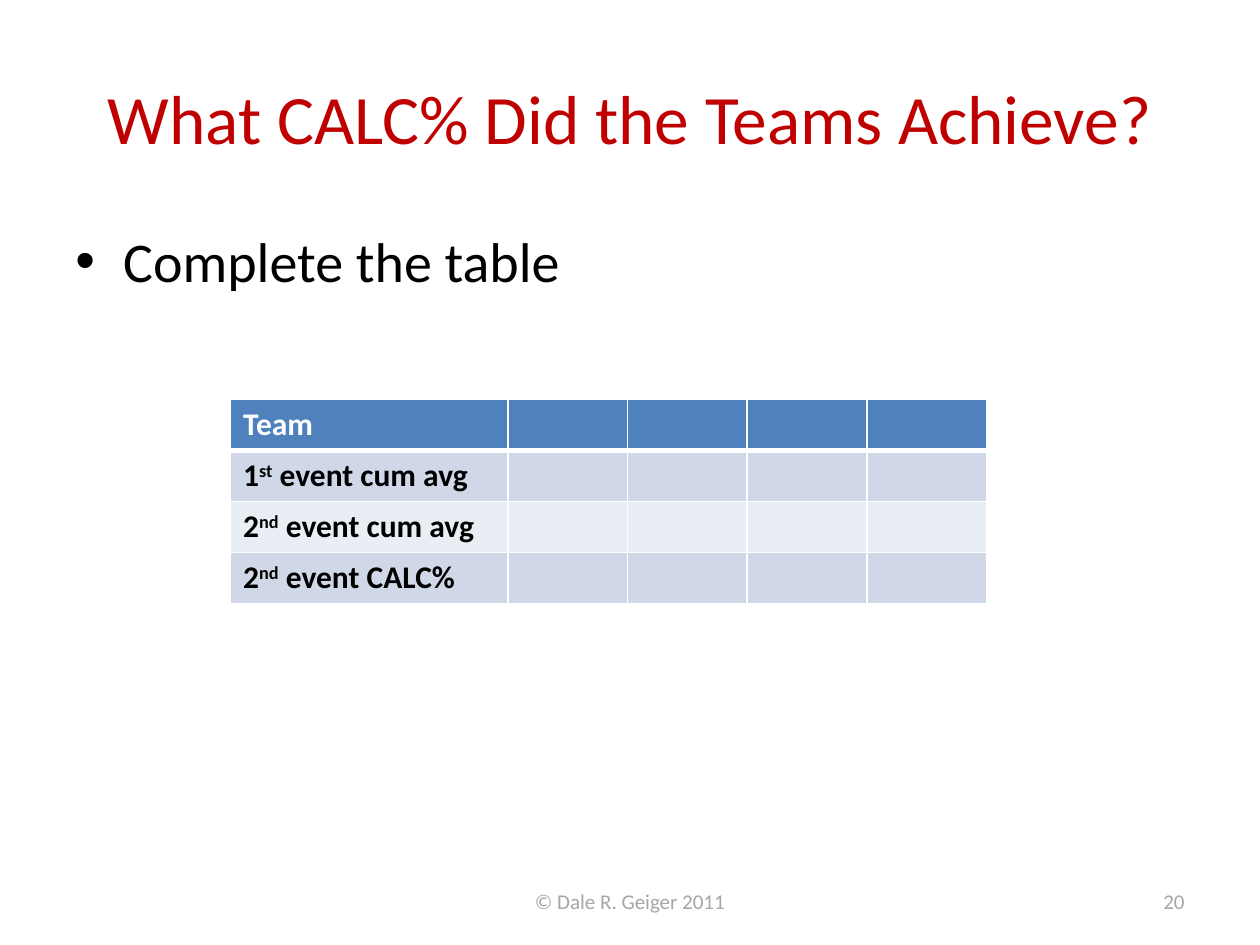
from lxml import etree
from pptx import Presentation
from pptx.dml.color import RGBColor
from pptx.enum.text import MSO_ANCHOR, PP_ALIGN
from pptx.oxml.ns import qn
from pptx.util import Inches, Pt

LEFT, CENTER, RIGHT = PP_ALIGN.LEFT, PP_ALIGN.CENTER, PP_ALIGN.RIGHT
TOP, MIDDLE = MSO_ANCHOR.TOP, MSO_ANCHOR.MIDDLE

RED = RGBColor(0xC0, 0x00, 0x00)
BLACK = RGBColor(0x00, 0x00, 0x00)
WHITE = RGBColor(0xFF, 0xFF, 0xFF)
GRAY = RGBColor(0xA6, 0xA6, 0xA6)
HEADER_BLUE = RGBColor(0x4F, 0x81, 0xBD)
BAND_DARK = RGBColor(0xD0, 0xD8, 0xE8)
BAND_LIGHT = RGBColor(0xE9, 0xED, 0xF4)

FONT = "Calibri"
SUPERSCRIPT = "30000"

# Each row label is a list of (text, is superscript) pieces
ROW_LABELS = [
    [("Team", False)],
    [("1", False), ("st", True), (" event cum avg", False)],
    [("2", False), ("nd", True), (" event cum avg", False)],
    [("2", False), ("nd", True), (" event CALC%", False)],
]
LABEL_WIDTH, TEAM_WIDTH, TEAM_COUNT = 2.2, 0.95, 4


def add_span(para, text, size=18, color=BLACK, bold=False, raised=False):
    """Append one formatted run to a paragraph."""
    span = para.add_run()
    span.text = text
    font = span.font
    font.name, font.size, font.bold = FONT, Pt(size), bold
    font.color.rgb = color
    if raised:
        font._element.set("baseline", SUPERSCRIPT)


def add_text(page, box, text, align=LEFT, anchor=MIDDLE, **style):
    """Place a wrapped text box and return its paragraph."""
    frame = page.shapes.add_textbox(*map(Inches, box)).text_frame
    frame.word_wrap = True
    frame.vertical_anchor = anchor
    para = frame.paragraphs[0]
    para.alignment = align
    add_span(para, text, **style)
    return para


def add_bullet(page, box, text, indent=0.38, **style):
    """Place a bulleted line with a hanging indent."""
    props = add_text(page, box, text, anchor=TOP, **style)._p.get_or_add_pPr()
    props.set("marL", str(Inches(indent)))
    props.set("indent", str(-Inches(indent)))
    before = etree.SubElement(props, qn("a:spcBef"))
    etree.SubElement(before, qn("a:spcPct"), val="20000")
    etree.SubElement(props, qn("a:buFont"), typeface="Arial")
    etree.SubElement(props, qn("a:buChar"), char="•")


def set_borders(cell, widths):
    """Draw white cell borders; widths maps a side tag to points."""
    props = cell._tc.get_or_add_tcPr()
    for position, (side, width) in enumerate(widths.items()):
        line = etree.Element(qn(f"a:{side}"), w=str(Pt(width)))
        fill = etree.SubElement(line, qn("a:solidFill"))
        etree.SubElement(fill, qn("a:srgbClr"), val=str(WHITE))
        props.insert(position, line)


def add_team_table(page, box):
    """Place the table with a label column and empty team columns."""
    frame = page.shapes.add_table(len(ROW_LABELS), 1 + TEAM_COUNT, *map(Inches, box))
    table = frame.table
    for index, column in enumerate(table.columns):
        column.width = Inches(TEAM_WIDTH if index else LABEL_WIDTH)

    for row, label in enumerate(ROW_LABELS):
        is_header = row == 0
        band = BAND_DARK if row % 2 else BAND_LIGHT
        for cell in table.rows[row].cells:
            cell.fill.solid()
            cell.fill.fore_color.rgb = HEADER_BLUE if is_header else band
            set_borders(cell, {"lnL": 1, "lnR": 1,
                               "lnT": 3 if row == 1 else 1,
                               "lnB": 3 if is_header else 1})
        para = table.cell(row, 0).text_frame.paragraphs[0]
        for text, raised in label:
            add_span(para, text, color=WHITE if is_header else BLACK,
                     bold=True, raised=raised)


def add_footer(page, box):
    """Place the centred credit and the page number at the right."""
    left, top, width, height = box
    credit_width, number_width = 3.17, 2.33
    credit_left = left + (width - credit_width) / 2
    number_left = left + width - number_width
    add_text(page, (credit_left, top, credit_width, height),
             "© Dale R. Geiger 2011", align=CENTER, size=12, color=GRAY)
    add_text(page, (number_left, top, number_width, height),
             "20", align=RIGHT, size=12, color=GRAY)


def main():
    deck = Presentation()
    deck.slide_width, deck.slide_height = Inches(10), Inches(7.5)
    page = deck.slides.add_slide(deck.slide_layouts[6])
    margin, content_width = 0.5, 9

    add_text(page, (margin, 0.3, content_width, 1.25),
             "What CALC% Did the Teams Achieve?",
             align=CENTER, size=39.6, color=RED)
    add_bullet(page, (margin, 1.75, content_width, 4.95),
               "Complete the table", size=32)
    add_team_table(page, (1.83, 3.17, LABEL_WIDTH + TEAM_COUNT * TEAM_WIDTH, 1.62))
    add_footer(page, (margin, 6.95, content_width, 0.4))
    deck.save("out.pptx")


if __name__ == "__main__":
    main()
